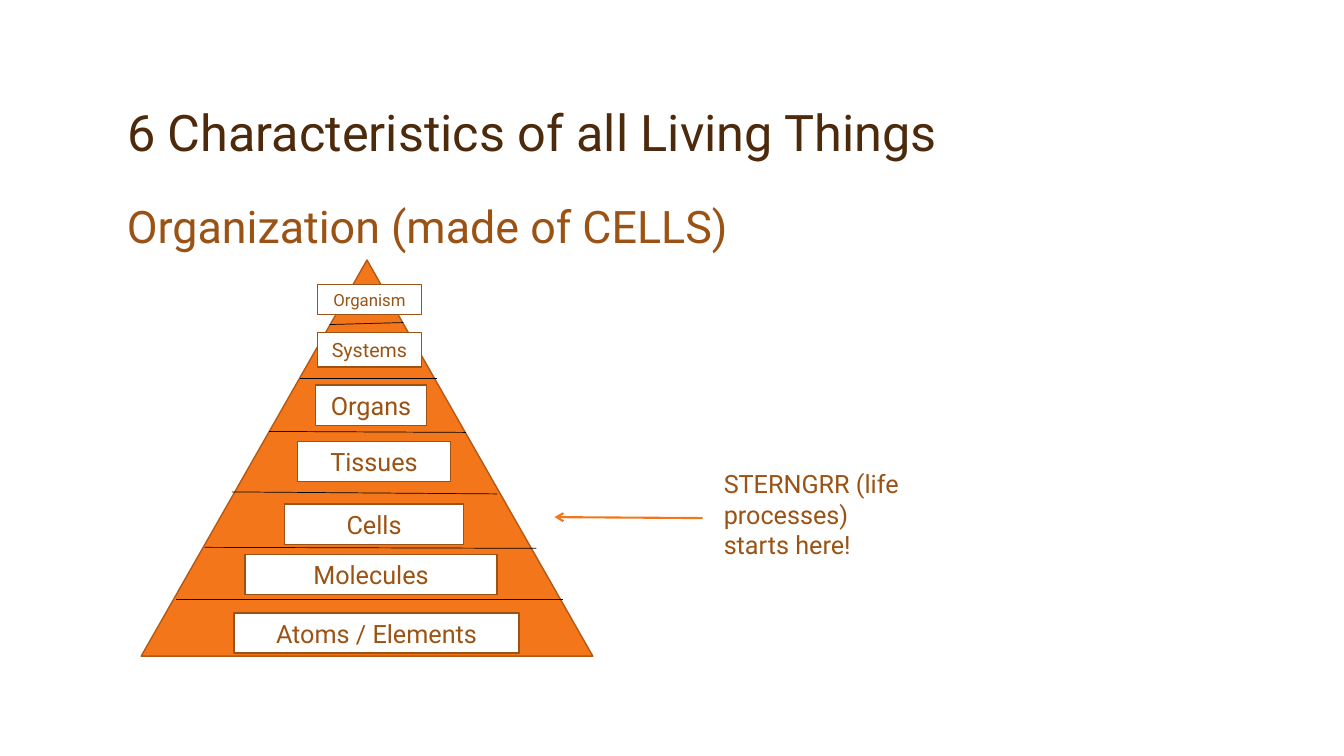
from dataclasses import dataclass

from lxml import etree
from pptx import Presentation
from pptx.dml.color import RGBColor
from pptx.enum.shapes import MSO_CONNECTOR, MSO_SHAPE
from pptx.enum.text import MSO_ANCHOR, MSO_AUTO_SIZE, PP_ALIGN
from pptx.oxml.ns import qn
from pptx.shapes.autoshape import Shape
from pptx.shapes.connector import Connector
from pptx.slide import Slide
from pptx.util import Inches, Pt

STRAIGHT = MSO_CONNECTOR.STRAIGHT
RECTANGLE, TRIANGLE = MSO_SHAPE.RECTANGLE, MSO_SHAPE.ISOSCELES_TRIANGLE
TOP, MIDDLE, BOTTOM = MSO_ANCHOR.TOP, MSO_ANCHOR.MIDDLE, MSO_ANCHOR.BOTTOM
LEFT, CENTER = PP_ALIGN.LEFT, PP_ALIGN.CENTER
NO_AUTOSIZE = MSO_AUTO_SIZE.NONE

FONT = "Roboto"
COLORS = {
    "title": "4D2A0B",
    "text": "9A5315",
    "pyramid": "F3771A",
    "pyramid_edge": "B45813",
    "divider": "000000",
    "label": "FFFFFF",
}


@dataclass(frozen=True)
class Level:
    name: str
    left: float
    top: float
    width: float
    height: float = 0.4
    size: int = 18


@dataclass(frozen=True)
class Divider:
    x1: float
    y1: float
    x2: float
    y2: float


LEVELS = [
    Level("Atoms / Elements", 2.32, 6.08, 2.83),
    Level("Molecules", 2.43, 5.5, 2.5),
    Level("Cells", 2.82, 5, 1.78),
    Level("Tissues", 2.95, 4.38, 1.52),
    Level("Organs", 3.13, 3.82, 1.1),
    Level("Systems", 3.15, 3.3, 1.03, 0.34, 14),
    Level("Organism", 3.15, 2.82, 1.03, 0.3, 12),
]
DIVIDERS = [
    Divider(1.75, 5.95, 5.58, 5.95),
    Divider(2.03, 5.43, 5.32, 5.44),
    Divider(2.3, 4.88, 4.93, 4.9),
    Divider(2.67, 4.28, 4.62, 4.29),
    Divider(2.98, 3.75, 4.33, 3.75),
    Divider(3.27, 3.22, 4, 3.2),
]


def rgb(color: str) -> RGBColor:
    return RGBColor.from_string(COLORS[color])


def write(shape: Shape, text: str, size: int, color: str = "text",
          anchor: MSO_ANCHOR = TOP, alignment: PP_ALIGN = LEFT,
          line_spacing: float = 1.0) -> None:
    frame = shape.text_frame
    frame.text = text
    paragraph = frame.paragraphs[0]
    formats = [
        (frame, {"word_wrap": True, "auto_size": NO_AUTOSIZE, "vertical_anchor": anchor}),
        (paragraph, {"alignment": alignment, "line_spacing": line_spacing}),
        (paragraph.font, {"name": FONT, "size": Pt(size)}),
    ]
    for target, values in formats:
        for attribute, value in values.items():
            setattr(target, attribute, value)
    paragraph.font.color.rgb = rgb(color)


def add_text(slide: Slide, text: str, left: float, top: float,
             width: float, height: float, size: int) -> None:
    box = slide.shapes.add_textbox(Inches(left), Inches(top), Inches(width), Inches(height))
    write(box, text, size)


def add_filled(slide: Slide, preset: MSO_SHAPE, left: float, top: float,
               width: float, height: float, fill: str, edge: str) -> Shape:
    shape = slide.shapes.add_shape(
        preset, Inches(left), Inches(top), Inches(width), Inches(height))
    shape.shadow.inherit = False
    shape.fill.solid()
    shape.fill.fore_color.rgb = rgb(fill)
    shape.line.color.rgb = rgb(edge)
    shape.line.width = Pt(1)
    return shape


def add_line(slide: Slide, x1: float, y1: float, x2: float, y2: float,
             color: str, width: float) -> Connector:
    line = slide.shapes.add_connector(
        STRAIGHT, Inches(x1), Inches(y1), Inches(x2), Inches(y2))
    line.line.color.rgb = rgb(color)
    line.line.width = Pt(width)
    etree.SubElement(line._element.spPr, qn("a:effectLst"))
    return line


def add_title(slide: Slide) -> None:
    title = slide.shapes.title
    title.left, title.top = Inches(1.16), Inches(0.33)
    title.width, title.height = Inches(11), Inches(1.33)
    write(title, "6 Characteristics of all Living Things", 36, "title", BOTTOM,
          line_spacing=0.9)


def add_pyramid(slide: Slide) -> None:
    add_filled(slide, TRIANGLE, 1.4, 2.58, 4.48, 3.93, "pyramid", "pyramid_edge")
    for divider in DIVIDERS:
        add_line(slide, divider.x1, divider.y1, divider.x2, divider.y2, "divider", 0.5)
    for level in LEVELS:
        label = add_filled(slide, RECTANGLE, level.left, level.top,
                           level.width, level.height, "label", "text")
        write(label, level.name, level.size, anchor=MIDDLE, alignment=CENTER)


def add_life_processes_note(slide: Slide) -> None:
    arrow = add_line(slide, 6.97, 5.14, 5.5, 5.13, "pyramid", 1.5)
    etree.SubElement(arrow.line._get_or_add_ln(), qn("a:tailEnd"), type="arrow")
    add_text(slide, "STERNGRR (life processes) starts here!", 7.08, 4.6, 1.98, 1.01, 18)


def main() -> None:
    presentation = Presentation()
    presentation.slide_width = Inches(13.33)
    presentation.slide_height = Inches(7.5)
    slide = presentation.slides.add_slide(presentation.slide_layouts[5])
    add_title(slide)
    add_text(slide, "Organization (made of CELLS)", 1.16, 1.92, 11, 4.62, 32)
    add_pyramid(slide)
    add_life_processes_note(slide)
    presentation.save("out.pptx")


if __name__ == "__main__":
    main()
